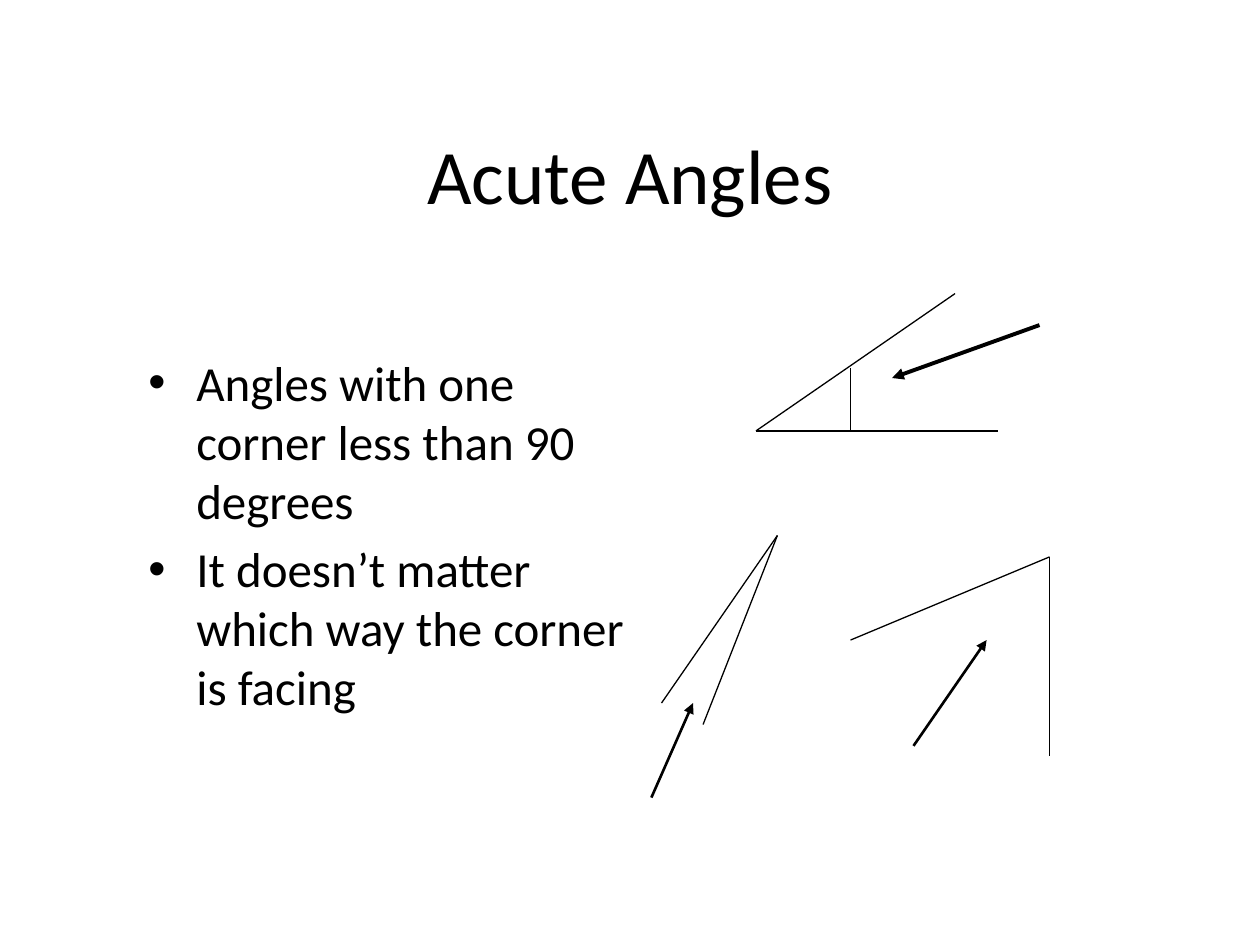
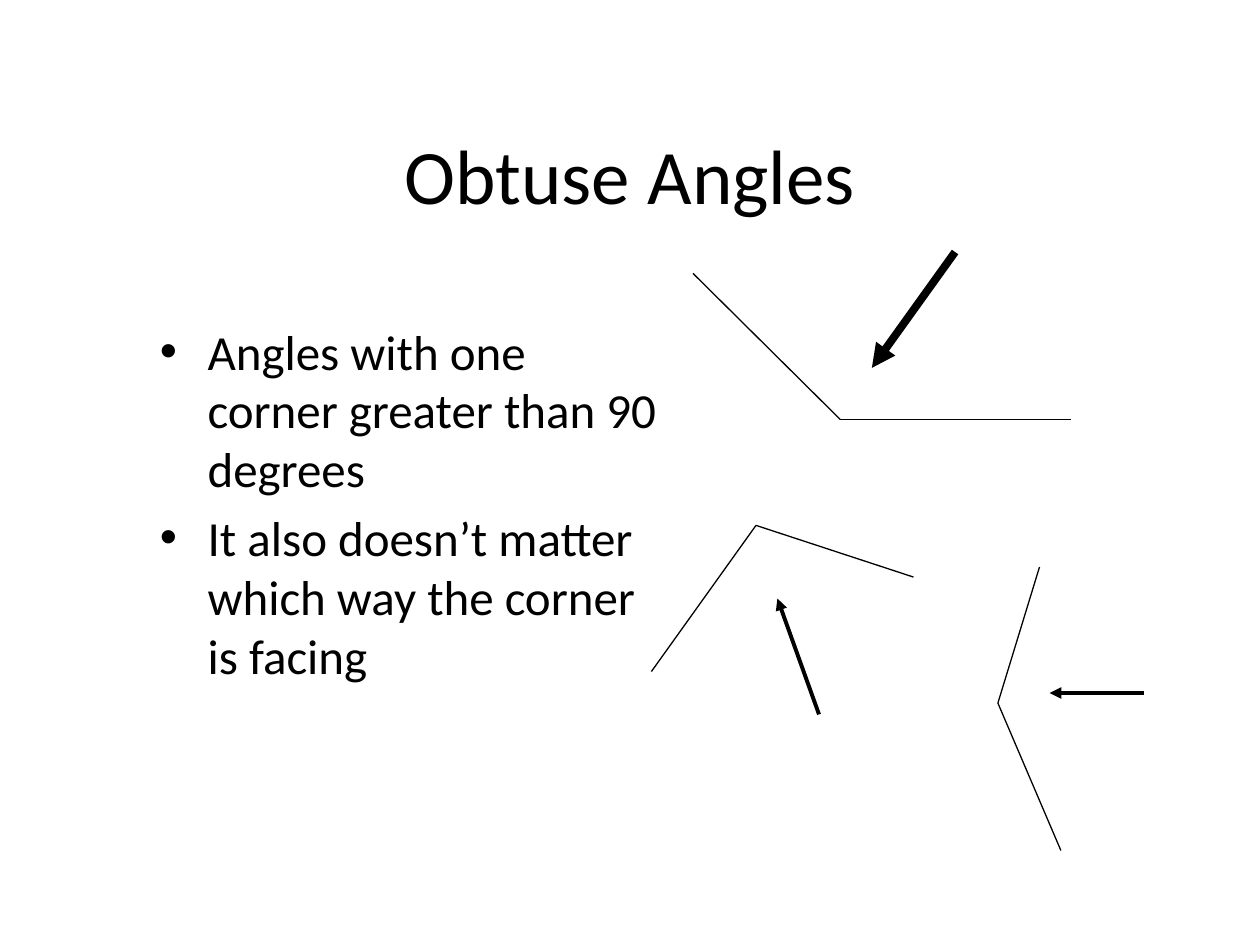
from dataclasses import dataclass

from lxml.etree import SubElement
from pptx import Presentation
from pptx.dml.color import RGBColor
from pptx.enum.shapes import MSO_CONNECTOR as Connector
from pptx.enum.text import MSO_ANCHOR as Anchor, PP_ALIGN as Align
from pptx.oxml.ns import qn
from pptx.util import Inches, Pt

FONT = "Calibri"
INK = "000000"
PAPER = "FFFFFF"
TITLE_BOX = (0.75, 0.75, 8.5, 1.25)
RULES_SIZE = (4.17, 4.17)
INDENT = 0.38
RAY_WIDTH = 0.75


@dataclass
class Angle:
    vertex: tuple
    rays: list
    arrow: tuple
    arrow_width: float
    marker: tuple = None


def color(hex_code):
    return RGBColor.from_string(hex_code)


def style_runs(paragraph, size):
    for run in paragraph.runs:
        run.font.name = FONT
        run.font.size = Pt(size)
        run.font.color.rgb = color(INK)


def add_title(slide, words, box):
    title = slide.shapes.title
    title.left, title.top, title.width, title.height = map(Inches, box)
    frame = title.text_frame
    frame.text = words
    frame.vertical_anchor = Anchor.MIDDLE
    frame.paragraphs[0].alignment = Align.CENTER
    style_runs(frame.paragraphs[0], 44)


def add_rules(slide, rules, box):
    frame = slide.shapes.add_textbox(*map(Inches, box)).text_frame
    frame.word_wrap = True
    frame.text = "\n".join(rules)
    for paragraph in frame.paragraphs:
        paragraph.space_before = Pt(5.6)
        style_runs(paragraph, 28)
        properties = paragraph._p.get_or_add_pPr()
        properties.set("marL", str(Inches(INDENT)))
        properties.set("indent", str(-Inches(INDENT)))
        SubElement(properties, qn("a:buFont"), typeface="Arial")
        SubElement(properties, qn("a:buChar"), char="•")


def add_line(slide, origin, start, end, width, arrowhead=False):
    x, y = origin
    ends = (x + start[0], y + start[1], x + end[0], y + end[1])
    segment = slide.shapes.add_connector(Connector.STRAIGHT, *map(Inches, ends))
    segment.line.color.rgb = color(INK)
    segment.line.width = Pt(width)
    if arrowhead:
        SubElement(segment.line._get_or_add_ln(), qn("a:tailEnd"), type="triangle")
    SubElement(segment._element.spPr, qn("a:effectLst"))


def add_angle(slide, angle):
    for ray_end in angle.rays:
        add_line(slide, angle.vertex, (0, 0), ray_end, RAY_WIDTH)
    if angle.marker:
        add_line(slide, angle.vertex, *angle.marker, RAY_WIDTH)
    add_line(slide, angle.vertex, *angle.arrow, angle.arrow_width, arrowhead=True)


def add_angle_slide(deck, title, rules, rules_corner, angles):
    slide = deck.slides.add_slide(deck.slide_layouts[5])
    slide.background.fill.solid()
    slide.background.fill.fore_color.rgb = color(PAPER)
    add_title(slide, title, TITLE_BOX)
    add_rules(slide, rules, rules_corner + RULES_SIZE)
    for angle in angles:
        add_angle(slide, angle)


ACUTE_ANGLES = [
    Angle((6, 3.42), [(1.92, 0), (1.58, -1.09)], ((2.25, -0.84), (1.08, -0.42)), 2.25,
          marker=((0.75, -0.5), (0.75, 0))),
    Angle((6.17, 4.25), [(-0.92, 1.33), (-0.59, 1.5)], ((-1, 2.08), (-0.67, 1.33)), 1.5),
    Angle((8.33, 4.42), [(-1.58, 0.66), (0, 1.58)], ((-1.08, 1.5), (-0.5, 0.66)), 1.5),
]
OBTUSE_ANGLES = [
    Angle((6.67, 3.33), [(1.83, 0), (-1.17, -1.16)], ((0.91, -1.33), (0.25, -0.41)), 4.5),
    Angle((6, 4.17), [(-0.83, 1.16), (1.25, 0.41)], ((0.5, 1.5), (0.17, 0.58)), 2.25),
    Angle((7.92, 5.58), [(0.33, -1.08), (0.5, 1.17)], ((1.16, -0.08), (0.41, -0.08)), 2.25),
]


def main():
    deck = Presentation()
    deck.slide_width, deck.slide_height = Inches(10), Inches(7.5)
    add_angle_slide(
        deck, "Acute Angles",
        ["Angles with one corner less than 90 degrees",
         "It doesn’t matter which way the corner is facing"],
        (1.08, 2.75), ACUTE_ANGLES)
    add_angle_slide(
        deck, "Obtuse Angles",
        ["Angles with one corner greater than 90 degrees",
         "It also doesn’t matter which way the corner is facing"],
        (1.17, 2.5), OBTUSE_ANGLES)
    deck.save("out.pptx")


if __name__ == "__main__":
    main()
